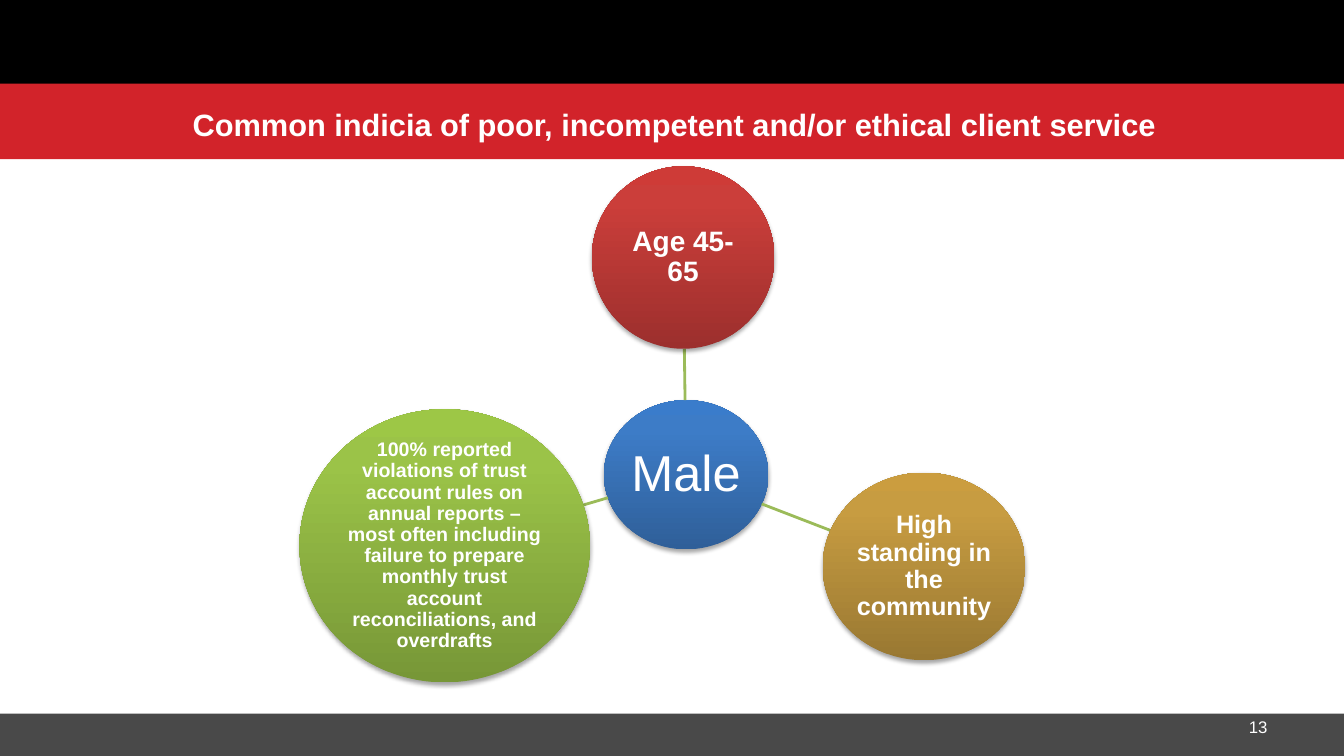
"""Build a slide with a radial diagram of common indicia around a central circle."""
from math import hypot

from pptx import Presentation
from pptx.dml.color import RGBColor
from pptx.enum.shapes import MSO_CONNECTOR, MSO_SHAPE
from pptx.enum.text import MSO_ANCHOR, PP_ALIGN
from pptx.oxml import parse_xml
from pptx.oxml.ns import nsdecls, qn
from pptx.util import Inches, Pt

RECT, OVAL = MSO_SHAPE.RECTANGLE, MSO_SHAPE.OVAL
STRAIGHT = MSO_CONNECTOR.STRAIGHT
MIDDLE = MSO_ANCHOR.MIDDLE
CENTER, RIGHT = PP_ALIGN.CENTER, PP_ALIGN.RIGHT

WIDTH, HEIGHT = 13.33, 7.5
FONT, WHITE, LINK = "Arial", "FFFFFF", "9BBB59"
STOPS = (0, 80, 100)

BANDS = [(0, 0.92, "000000"), (0.83, 0.75, "D2232A"), (7.08, 0.42, "494949")]
LABELS = [
    ("13", (9.56, 7.08, 3.11, 0.27), RIGHT, {"size": Pt(12)}),
    ("Common indicia of poor, incompetent and/or ethical client service",
     (1.55, 0.81, 10.28, 0.85), CENTER, {"size": Pt(22), "bold": True}),
]
HUB = ("Male", (5.99, 3.97, 1.63, 1.48), 0.03, {"size": Pt(36)},
       ("2F5F99", "3D7CC7", "3A7CCB"))
SPOKES = [
    ("Age 45-65", (5.87, 1.65, 1.81, 1.81), 0.01,
     {"size": Pt(20), "bold": True}, ("9C2F2D", "CB3E3A", "CE3B37")),
    ("High standing in the community", (8.16, 4.69, 2.01, 1.86), 0.01,
     {"size": Pt(18), "bold": True}, ("997832", "C79C41", "CB9D3F")),
    ("100% reported violations of trust account rules on annual reports – "
     "most often including failure to prepare monthly trust account "
     "reconciliations, and overdrafts", (2.97, 4.06, 2.88, 2.71), 0.01,
     {"size": Pt(14), "bold": True}, ("779737", "9BC348", "9DC746")),
]


def color(value):
    return RGBColor.from_string(value)


def inches(box):
    return [Inches(v) for v in box]


def write(sp, text, align, font, spacing=1.0):
    tf = sp.text_frame
    tf.word_wrap = True
    tf.vertical_anchor = MIDDLE
    p = tf.paragraphs[0]
    p.alignment = align
    p.line_spacing = spacing
    r = p.add_run()
    r.text = text
    for name, value in {"name": FONT, **font}.items():
        setattr(r.font, name, value)
    r.font.color.rgb = color(WHITE)


def add_shape(slide, kind, box):
    sp = slide.shapes.add_shape(kind, *inches(box))
    sp.shadow.inherit = False
    sp.line.fill.background()
    return sp


def add_circle(slide, text, box, inset, font, shades):
    sp = add_shape(slide, OVAL, box)
    sp.fill.gradient()
    sp.fill.gradient_angle = 90
    stops = "".join(f'<a:gs pos="{pos * 1000}"><a:srgbClr val="{shade}"/></a:gs>'
                    for pos, shade in zip(STOPS, shades))
    spPr = sp._element.spPr
    grad = spPr.find(qn("a:gradFill"))
    grad.replace(grad.find(qn("a:gsLst")),
                 parse_xml(f'<a:gsLst {nsdecls("a")}>{stops}</a:gsLst>'))
    spPr.find(qn("a:effectLst")).append(parse_xml(
        f'<a:outerShdw {nsdecls("a")} blurRad="{Pt(3.1)}" dist="{Pt(1.8)}" '
        'dir="5400000" rotWithShape="0"><a:srgbClr val="000000">'
        '<a:alpha val="35000"/></a:srgbClr></a:outerShdw>'))
    for side in ("left", "top", "right", "bottom"):
        setattr(sp.text_frame, f"margin_{side}", Inches(inset))
    write(sp, text, CENTER, font, 0.9)


def center(box):
    x, y, w, h = box
    return x + w / 2, y + h / 2


def edge_point(box, other):
    """Return where the line between two circle centres leaves the first one."""
    (x, y), (ox, oy) = center(box), center(other)
    dx, dy = ox - x, oy - y
    reach = hypot(dx / (box[2] / 2), dy / (box[3] / 2))
    return x + dx / reach, y + dy / reach


def add_link(slide, start, end):
    points = edge_point(start, end) + edge_point(end, start)
    cxn = slide.shapes.add_connector(STRAIGHT, *inches(points))
    cxn.line.color.rgb = color(LINK)
    cxn.line.width = Pt(2)
    cxn._element.spPr.append(parse_xml(f'<a:effectLst {nsdecls("a")}/>'))


def main():
    prs = Presentation()
    prs.slide_width, prs.slide_height = inches((WIDTH, HEIGHT))
    slide = prs.slides.add_slide(prs.slide_layouts[6])
    for top, height, fill in BANDS:
        sp = add_shape(slide, RECT, (0, top, WIDTH, height))
        sp.fill.solid()
        sp.fill.fore_color.rgb = color(fill)
    for text, box, align, font in LABELS:
        write(slide.shapes.add_textbox(*inches(box)), text, align, font)
    add_circle(slide, *HUB)
    for spoke in SPOKES:
        add_link(slide, HUB[1], spoke[1])
        add_circle(slide, *spoke)
    prs.save("out.pptx")


if __name__ == "__main__":
    main()
